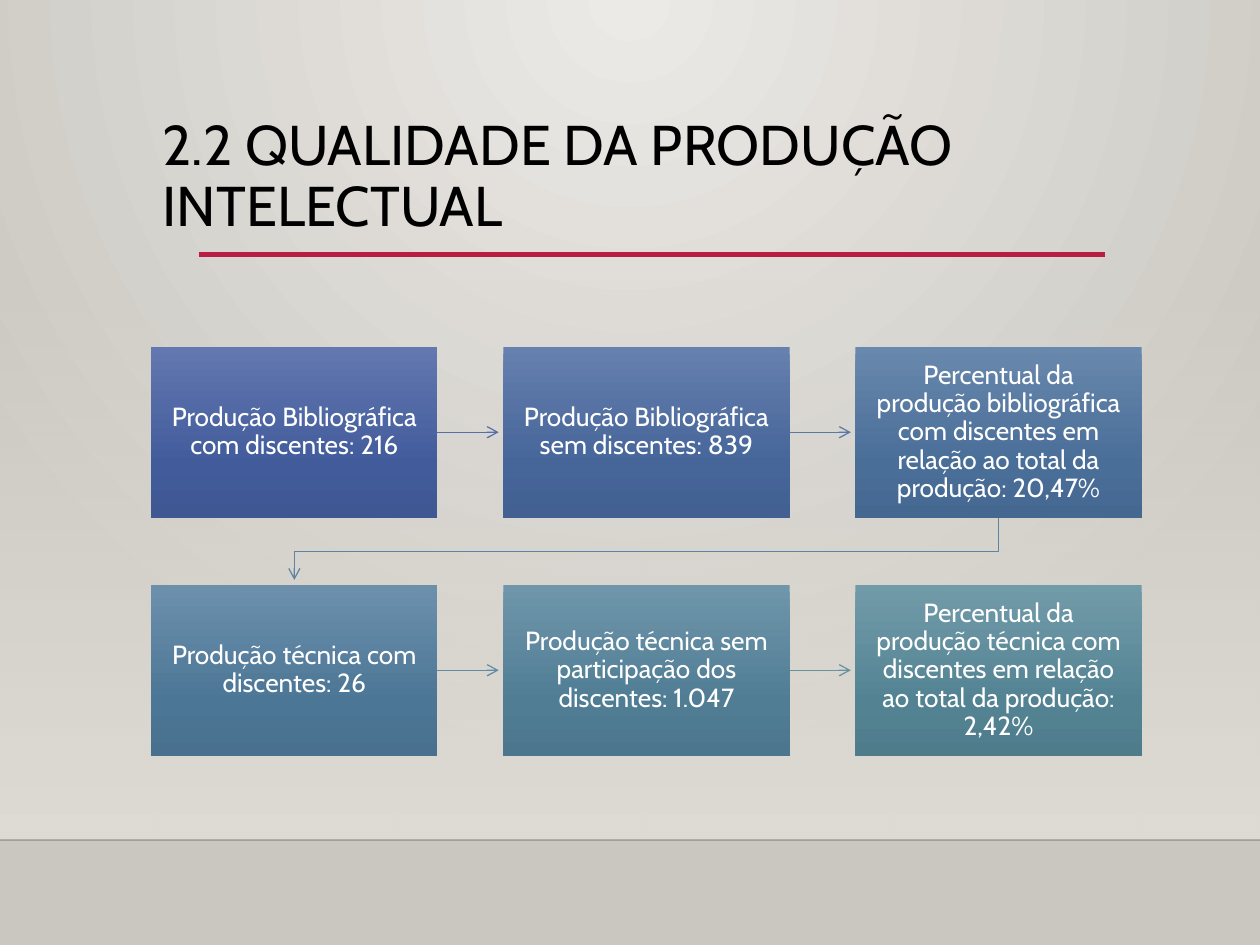
"""Build a slide on the quality of intellectual output as a six-step flow."""
from lxml import etree
from pptx import Presentation
from pptx.dml.color import RGBColor
from pptx.enum.shapes import MSO_CONNECTOR, MSO_SHAPE
from pptx.enum.text import MSO_ANCHOR, MSO_AUTO_SIZE, PP_ALIGN
from pptx.oxml.ns import qn
from pptx.util import Pt

STRAIGHT, RECT = MSO_CONNECTOR.STRAIGHT, MSO_SHAPE.RECTANGLE
TOP, MIDDLE = MSO_ANCHOR.TOP, MSO_ANCHOR.MIDDLE
LEFT, CENTER, NO_FIT = PP_ALIGN.LEFT, PP_ALIGN.CENTER, MSO_AUTO_SIZE.NONE
rgb = RGBColor.from_string
BLACK, WHITE, RED = rgb("000000"), rgb("FFFFFF"), rgb("B71E42")
SAND, LIGHT, STONE = rgb("DFDBD5"), rgb("ECEAE7"), rgb("CAC7C1")
FONT = "Cabin"

TITLE = "2.2 QUALIDADE DA PRODUÇÃO INTELECTUAL"
STEPS = [
    ("Produção Bibliográfica com discentes: 216", "6378B0", "425B9B", "3F5793"),
    ("Produção Bibliográfica sem discentes: 839", "6680AF", "466599", "426091"),
    ("Percentual da produção bibliográfica com discentes em relação ao total da produção: 20,47%",
     "6988AD", "496E98", "456890"),
    ("Produção técnica com discentes: 26", "6C90AC", "4C7696", "49708E"),
    ("Produção técnica sem participação dos discentes: 1.047", "6F96AB", "507D94", "4C768D"),
    ("Percentual da produção técnica com discentes em relação ao total da produção: 2,42%",
     "729BA9", "538393", "4F7C8B"),
]
ARROW_COLORS = [rgb(c) for c in ("586EA6", "5C79A5", "6083A3", "648BA2", "6892A0")]

COLS = 3
X0, Y0, BOX_W, BOX_H = 86.4, 198, 163.6, 98
STEP_X, STEP_Y = 201.2, 136
TIP_GAP = 2.6


def sub(parent, tag, **attrs):
    return etree.SubElement(parent, qn(tag), attrs)


def set_attrs(obj, **values):
    for name, value in values.items():
        setattr(obj, name, value)


def set_gradient(parent, stops, radial=False):
    solid = parent.find(".//" + qn("a:solidFill"))
    grad = etree.Element(qn("a:gradFill"), {"rotWithShape": "1"})
    stop_list = sub(grad, "a:gsLst")
    for pos, color, alpha in stops:
        stop = sub(stop_list, "a:gs", pos=str(pos * 1000))
        sub(sub(stop, "a:srgbClr", val=str(color)), "a:alpha", val=str(alpha * 1000))
    if radial:
        path = sub(grad, "a:path", path="circle")
        sub(path, "a:fillToRect", l="43000", t="0", r="43000", b="100000")
    else:
        sub(grad, "a:lin", ang="5400000", scaled="0")
    solid.getparent().replace(solid, grad)


def add_rect(s, x, y, w, h, stops):
    sp = s.shapes.add_shape(RECT, Pt(x), Pt(y), Pt(w), Pt(h))
    sp.shadow.inherit = False
    sp.line.fill.background()
    sp.fill.solid()
    set_gradient(sp._element.spPr, stops)
    return sp


def style_line(sp, color, width, alpha=100, arrow=False):
    sp.line.color.rgb = color
    sp.line.width = Pt(width)
    ln = sp.line._get_or_add_ln()
    if alpha < 100:
        sub(ln.find(".//" + qn("a:srgbClr")), "a:alpha", val=str(alpha * 1000))
    if arrow:
        sub(ln, "a:tailEnd", type="arrow")


def add_line(s, x1, y1, x2, y2, *args, **kwargs):
    cxn = s.shapes.add_connector(STRAIGHT, Pt(x1), Pt(y1), Pt(x2), Pt(y2))
    style_line(cxn, *args, **kwargs)
    sub(cxn._element.spPr, "a:effectLst")


def add_bent_arrow(s, points, color):
    pts = [(Pt(x), Pt(y)) for x, y in points]
    builder = s.shapes.build_freeform(*pts[0])
    builder.add_line_segments(pts[1:], close=False)
    sp = builder.convert_to_shape()
    sp.fill.background()
    style_line(sp, color, 0.75, arrow=True)
    sp.shadow.inherit = False


def write(sp, text, size, color, align, anchor, inset_x, inset_y):
    tf = sp.text_frame
    set_attrs(tf, word_wrap=True, auto_size=NO_FIT, vertical_anchor=anchor,
              margin_left=Pt(inset_x), margin_right=Pt(inset_x),
              margin_top=Pt(inset_y), margin_bottom=Pt(inset_y))
    p = tf.paragraphs[0]
    set_attrs(p, alignment=align, line_spacing=0.9, space_before=Pt(0))
    r = p.add_run()
    r.text = text
    set_attrs(r.font, name=FONT, size=Pt(size), bold=False)
    r.font.color.rgb = color


def add_steps(s):
    spots = [(X0 + i % COLS * STEP_X, Y0 + i // COLS * STEP_Y) for i in range(len(STEPS))]
    for (x, y), (nx, ny), color in zip(spots, spots[1:], ARROW_COLORS):
        if y == ny:
            mid = y + BOX_H / 2
            add_line(s, x + BOX_W, mid, nx - TIP_GAP, mid, color, 0.75, arrow=True)
        else:
            start, end, turn = x + BOX_W / 2, nx + BOX_W / 2, (y + BOX_H + ny) / 2
            add_bent_arrow(s, [(start, y + BOX_H), (start, turn), (end, turn),
                               (end, ny - TIP_GAP)], color)
    for (x, y), (text, *colors) in zip(spots, STEPS):
        stops = [(pos, rgb(c), 100) for pos, c in zip((0, 69, 100), colors)]
        sp = add_rect(s, x, y, BOX_W, BOX_H, stops)
        write(sp, text, 15, WHITE, CENTER, MIDDLE, 8, 8.4)


def main():
    prs = Presentation()
    set_attrs(prs, slide_width=Pt(720), slide_height=Pt(540))
    s = prs.slides.add_slide(prs.slide_layouts[5])
    s.background.fill.solid()
    set_gradient(s._element, [(0, LIGHT, 100), (100, STONE, 100)], radial=True)
    add_rect(s, 0, 158.4, 720, 321.6, [(0, SAND, 0), (100, SAND, 100)])
    add_line(s, 0, 480, 720, 480, BLACK, 1, alpha=20)
    add_line(s, 113.8, 145.4, 631.4, 145.4, RED, 2.5)
    title = s.shapes.title
    set_attrs(title, left=Pt(85.7), top=Pt(63.4), width=Pt(567.4), height=Pt(82.8))
    write(title, TITLE, 32, BLACK, LEFT, TOP, 7.2, 3.6)
    add_steps(s)
    prs.save("out.pptx")


if __name__ == "__main__":
    main()
